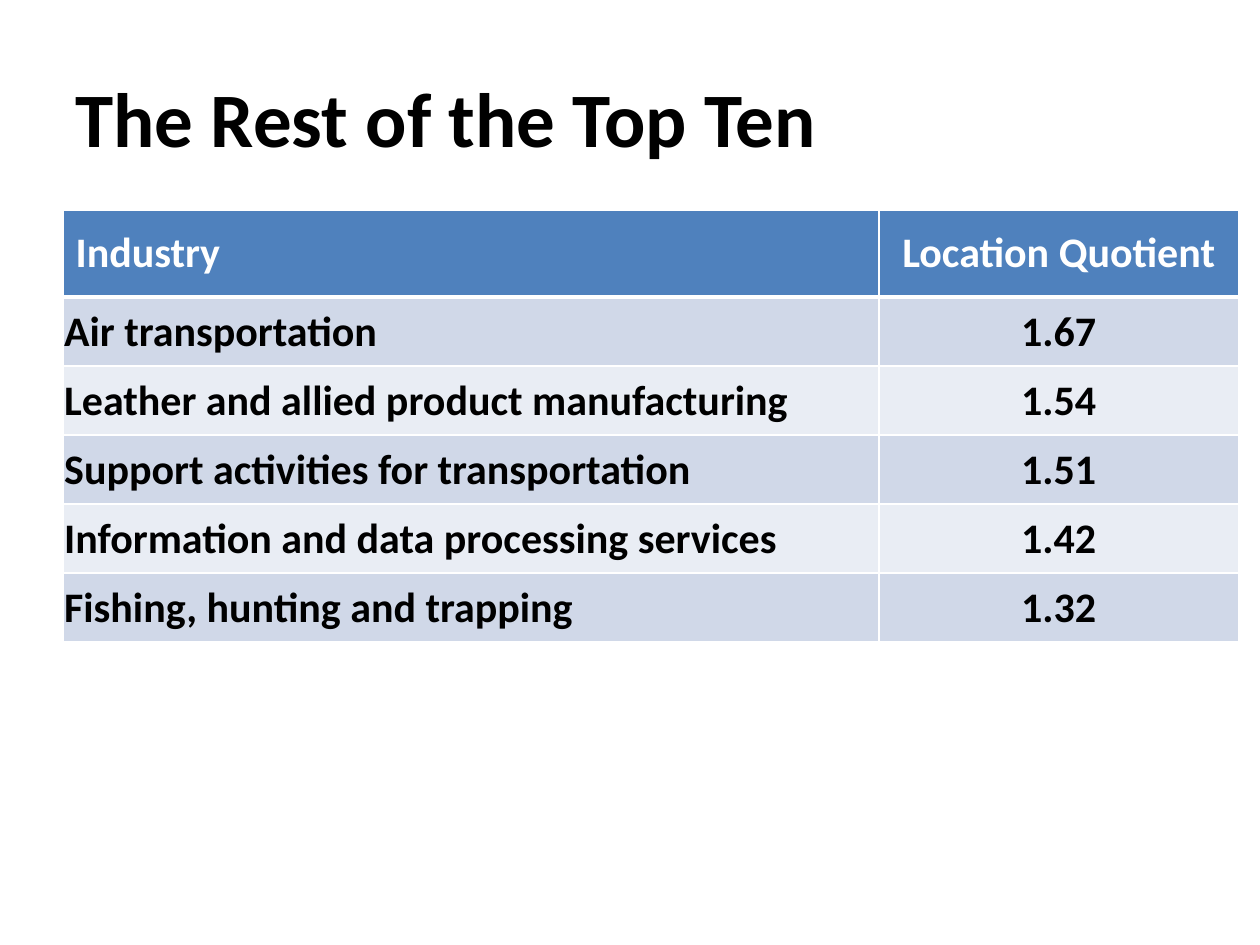
"""Build a slide with a table of industries and their location quotients."""
from lxml import etree
from pptx import Presentation
from pptx import util as u
from pptx.dml.color import RGBColor
from pptx.enum import text
from pptx.oxml import ns

COLORS = {
    "title": "000000",
    "header": "4F81BD",
    "header_text": "FFFFFF",
    "bands": ("D0D8E8", "E9EDF4"),
    "body_text": "000000",
    "border": "FFFFFF",
}
FONT = "Calibri"
HEADER = ("Industry", "Location Quotient")
INDUSTRIES = (
    ("Air transportation", "1.67"),
    ("Leather and allied product manufacturing", "1.54"),
    ("Support activities for transportation", "1.51"),
    ("Information and data processing services", "1.42"),
    ("Fishing, hunting and trapping", "1.32"),
)
COL_WIDTHS = (466.4, 205.2)
HEADER_HEIGHT, ROW_HEIGHT = 49.7, 39.45


def style_text(p, size, color, align=text.PP_ALIGN.LEFT):
    p.alignment = align
    for r in p.runs:
        r.font.name = FONT
        r.font.size = u.Pt(size)
        r.font.bold = True
        r.font.color.rgb = RGBColor.from_string(color)


def add_title(s, title):
    sp = s.shapes.add_textbox(u.Pt(36), u.Pt(21.6), u.Pt(648), u.Pt(90))
    tf = sp.text_frame
    tf.word_wrap = True
    tf.vertical_anchor = text.MSO_ANCHOR.MIDDLE
    tf.text = title
    style_text(tf.paragraphs[0], 44, COLORS["title"])


def set_borders(cell, bottom):
    tc_pr = cell._tc.get_or_add_tcPr()
    for side, width in (("L", 1), ("R", 1), ("T", 1), ("B", bottom)):
        ln = etree.SubElement(tc_pr, ns.qn(f"a:ln{side}"), w=str(u.Pt(width)))
        fill = etree.SubElement(ln, ns.qn("a:solidFill"))
        etree.SubElement(fill, ns.qn("a:srgbClr"), val=COLORS["border"])


def fill_cell(cell, value, fill, color, align, bottom=1):
    set_borders(cell, bottom)
    cell.fill.solid()
    cell.fill.fore_color.rgb = RGBColor.from_string(fill)
    cell.vertical_anchor = text.MSO_ANCHOR.MIDDLE
    cell.text = value
    style_text(cell.text_frame.paragraphs[0], 24, color, align)


def add_industry_table(s):
    rows = (HEADER, *INDUSTRIES)
    height = HEADER_HEIGHT + ROW_HEIGHT * len(INDUSTRIES)
    table = s.shapes.add_table(
        len(rows), len(HEADER), u.Pt(36), u.Pt(120), u.Pt(sum(COL_WIDTHS)), u.Pt(height)
    ).table
    for column, width in zip(table.columns, COL_WIDTHS):
        column.width = u.Pt(width)
    aligns = (text.PP_ALIGN.LEFT, text.PP_ALIGN.CENTER)
    for i, values in enumerate(rows):
        table.rows[i].height = u.Pt(ROW_HEIGHT if i else HEADER_HEIGHT)
        for j, (value, align) in enumerate(zip(values, aligns)):
            cell = table.cell(i, j)
            if i == 0:
                fill_cell(cell, value, COLORS["header"], COLORS["header_text"], align, 3)
            else:
                fill_cell(cell, value, COLORS["bands"][(i - 1) % 2], COLORS["body_text"], align)
                cell.margin_left = cell.margin_right = cell.margin_top = u.Pt(0.7)
                cell.margin_bottom = u.Pt(0)


def main():
    prs = Presentation()
    prs.slide_width, prs.slide_height = u.Pt(720), u.Pt(540)
    s = prs.slides.add_slide(prs.slide_layouts[6])
    add_title(s, "The Rest of the Top Ten")
    add_industry_table(s)
    prs.save("out.pptx")


if __name__ == "__main__":
    main()
